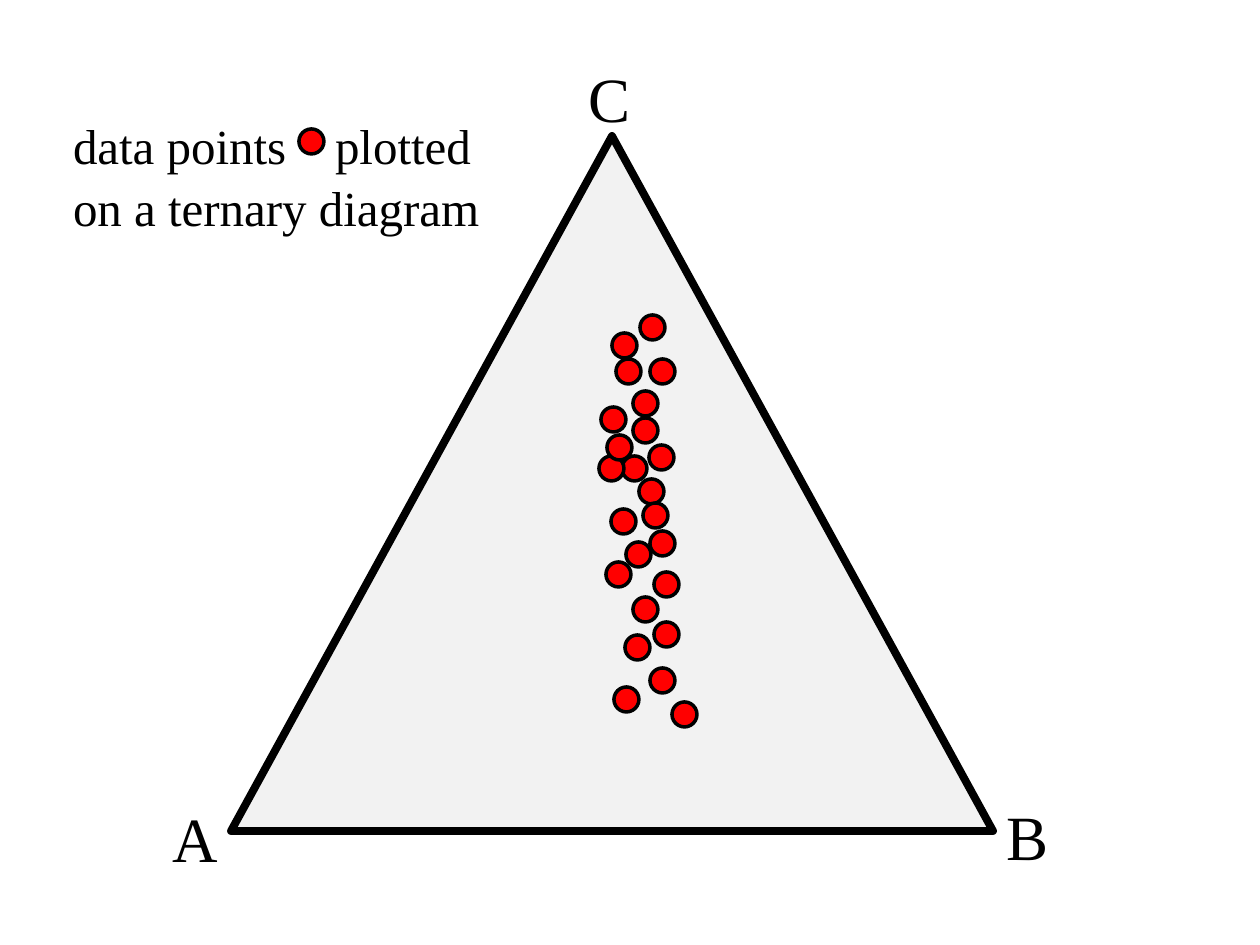
from lxml.etree import SubElement
from pptx import Presentation
from pptx.dml.color import RGBColor
from pptx.enum.shapes import MSO_SHAPE
from pptx.enum.text import MSO_ANCHOR, MSO_AUTO_SIZE
from pptx.oxml.ns import qn
from pptx.util import Emu, Pt

COLORS = {"ink": "000000", "area": "F2F2F2", "dot": "FF0000"}
DOT = 25
LABELS = [("A", 160, 788, 72), ("B", 993, 786, 68), ("C", 576, 48, 68)]
POINTS = [
    (626, 542), (650, 359), (654, 622), (650, 668), (622, 456), (614, 687),
    (672, 702), (625, 635), (640, 315), (639, 479), (616, 359), (649, 445),
    (601, 407), (599, 456), (633, 391), (612, 333), (633, 597), (606, 562),
    (650, 531), (611, 509), (654, 572), (633, 418), (643, 503), (607, 435),
]


def px(n):
    return Emu(round(n * 914400 / 126))


def color(name):
    return RGBColor.from_string(COLORS[name])


class Board:
    font = "Times New Roman"

    def __init__(self, slide):
        self.slide = slide

    def shape(self, kind, x, y, w, h, fill, line):
        item = self.slide.shapes.add_shape(kind, px(x), px(y), px(w), px(h))
        item.shadow.inherit = False
        item.fill.solid()
        item.fill.fore_color.rgb = color(fill)
        item.line.color.rgb = color("ink")
        item.line.width = Pt(line)

    def dot(self, x, y):
        self.shape(MSO_SHAPE.OVAL, x, y, DOT, DOT, "dot", 2)

    def text(self, lines, x, y, w, h, size, space=1.0, tab=None):
        box = self.slide.shapes.add_textbox(px(x), px(y), px(w), px(h))
        frame = box.text_frame
        frame.word_wrap = False
        frame.auto_size = MSO_AUTO_SIZE.NONE
        frame.vertical_anchor = MSO_ANCHOR.TOP
        frame.margin_left = frame.margin_right = px(13)
        frame.margin_top, frame.margin_bottom = px(12), 0
        for i, line in enumerate(lines):
            para = frame.add_paragraph() if i else frame.paragraphs[0]
            para.line_spacing = space
            if tab:
                stops = SubElement(para._p.get_or_add_pPr(), qn("a:tabLst"))
                SubElement(stops, qn("a:tab"), pos=str(px(tab)), algn="l")
            run = para.add_run()
            run.text = line
            run.font.name = self.font
            run.font.size = Pt(size)
            run.font.color.rgb = color("ink")


def main():
    deck = Presentation()
    deck.slide_width, deck.slide_height = px(1260), px(945)
    board = Board(deck.slides.add_slide(deck.slide_layouts[6]))
    board.shape(MSO_SHAPE.ISOSCELES_TRIANGLE, 231, 136, 762, 695, "area", 4.5)
    for name, x, y, w in LABELS:
        board.text([name], x, y, w, 89, 36)
    for x, y in POINTS:
        board.dot(x, y)
    board.text(["data points\tplotted", "on a ternary diagram"],
               60, 101, 436, 131, 28, space=1.05, tab=262)
    board.dot(299, 129)
    deck.save("out.pptx")


if __name__ == "__main__":
    main()
